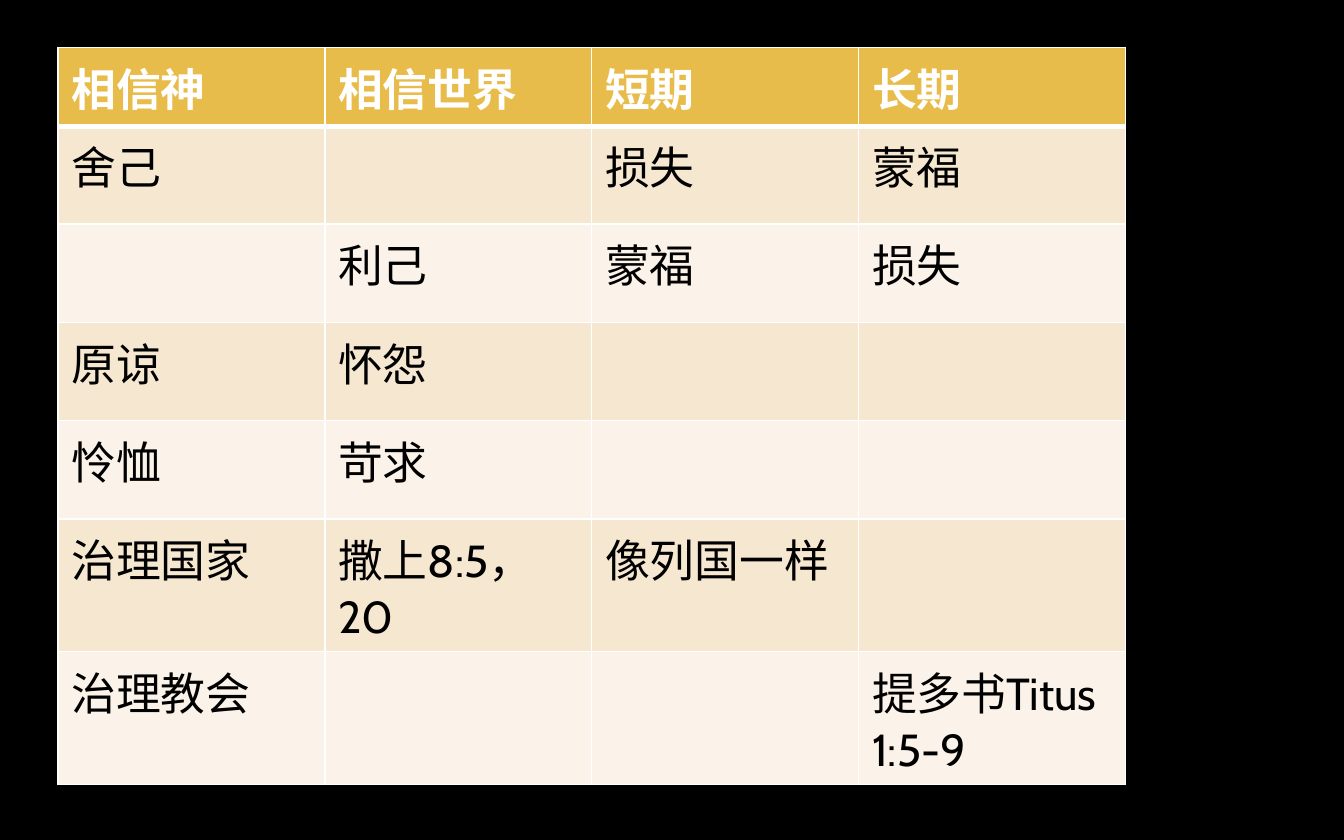
"""Build a slide with a table comparing trust in God and trust in the world."""
from lxml import etree
from pptx import Presentation
from pptx import util as u
from pptx.dml.color import RGBColor
from pptx.oxml import ns

FONT = "Cabin"
WHITE, BLACK = "FFFFFF", "000000"
HEADER_FILL = "E8BC4A"
BAND_FILLS = ("F6E7D0", "FBF3E9")
HEADER_HEIGHT, BODY_HEIGHT, COLUMN_WIDTH = 36, 52.6, 143
ROWS = [
    ("相信神", "相信世界", "短期", "长期"),
    ("舍己", "", "损失", "蒙福"),
    ("", "利己", "蒙福", "损失"),
    ("原谅", "怀怨", "", ""),
    ("怜恤", "苛求", "", ""),
    ("治理国家", "撒上8:5，20", "像列国一样", ""),
    ("治理教会", "", "", "提多书Titus 1:5-9"),
]


def color(value):
    """Return the colour for a hex string."""
    return RGBColor.from_string(value)


def paint(fill, value):
    """Make a fill solid in the given colour."""
    fill.solid()
    fill.fore_color.rgb = color(value)


def write(frame, content, size=24, ink=BLACK, bold=False):
    """Write one formatted run into a text frame."""
    span = frame.paragraphs[0].add_run()
    span.text = content
    span.font.name = FONT
    span.font.size = u.Pt(size)
    span.font.bold = bold
    span.font.color.rgb = color(ink)


def set_borders(cell, ink=WHITE, **widths):
    """Draw the four cell borders, one point wide unless stated."""
    properties = cell._tc.get_or_add_tcPr()
    for index, side in enumerate("LRTB"):
        line = etree.Element(ns.qn(f"a:ln{side}"), w=str(u.Pt(widths.get(side, 1))))
        fill = etree.SubElement(line, ns.qn("a:solidFill"))
        etree.SubElement(fill, ns.qn("a:srgbClr"), val=ink)
        properties.insert(index, line)


def style_cell(cell, content, row):
    """Fill, border and write a cell according to its row."""
    header = row == 0
    paint(cell.fill, HEADER_FILL if header else BAND_FILLS[(row - 1) % 2])
    set_borders(cell, T=3 if row == 1 else 1, B=3 if header else 1)
    if content:
        write(cell.text_frame, content, ink=WHITE if header else BLACK, bold=header)


def add_comparison(page, left, top):
    """Add the comparison table to the page."""
    heights = [HEADER_HEIGHT] + [BODY_HEIGHT] * (len(ROWS) - 1)
    columns = len(ROWS[0])
    table = page.shapes.add_table(
        len(ROWS), columns, u.Pt(left), u.Pt(top),
        u.Pt(COLUMN_WIDTH * columns), u.Pt(sum(heights)),
    ).table
    for column in table.columns:
        column.width = u.Pt(COLUMN_WIDTH)
    for row, contents in enumerate(ROWS):
        table.rows[row].height = u.Pt(heights[row])
        for column, content in enumerate(contents):
            style_cell(table.cell(row, column), content, row)


def main():
    """Create and save the deck."""
    deck = Presentation()
    deck.slide_width, deck.slide_height = u.Pt(720), u.Pt(450)
    page = deck.slides.add_slide(deck.slide_layouts[6])
    paint(page.background.fill, BLACK)
    add_comparison(page, left=31, top=25.5)
    deck.save("out.pptx")


if __name__ == "__main__":
    main()
